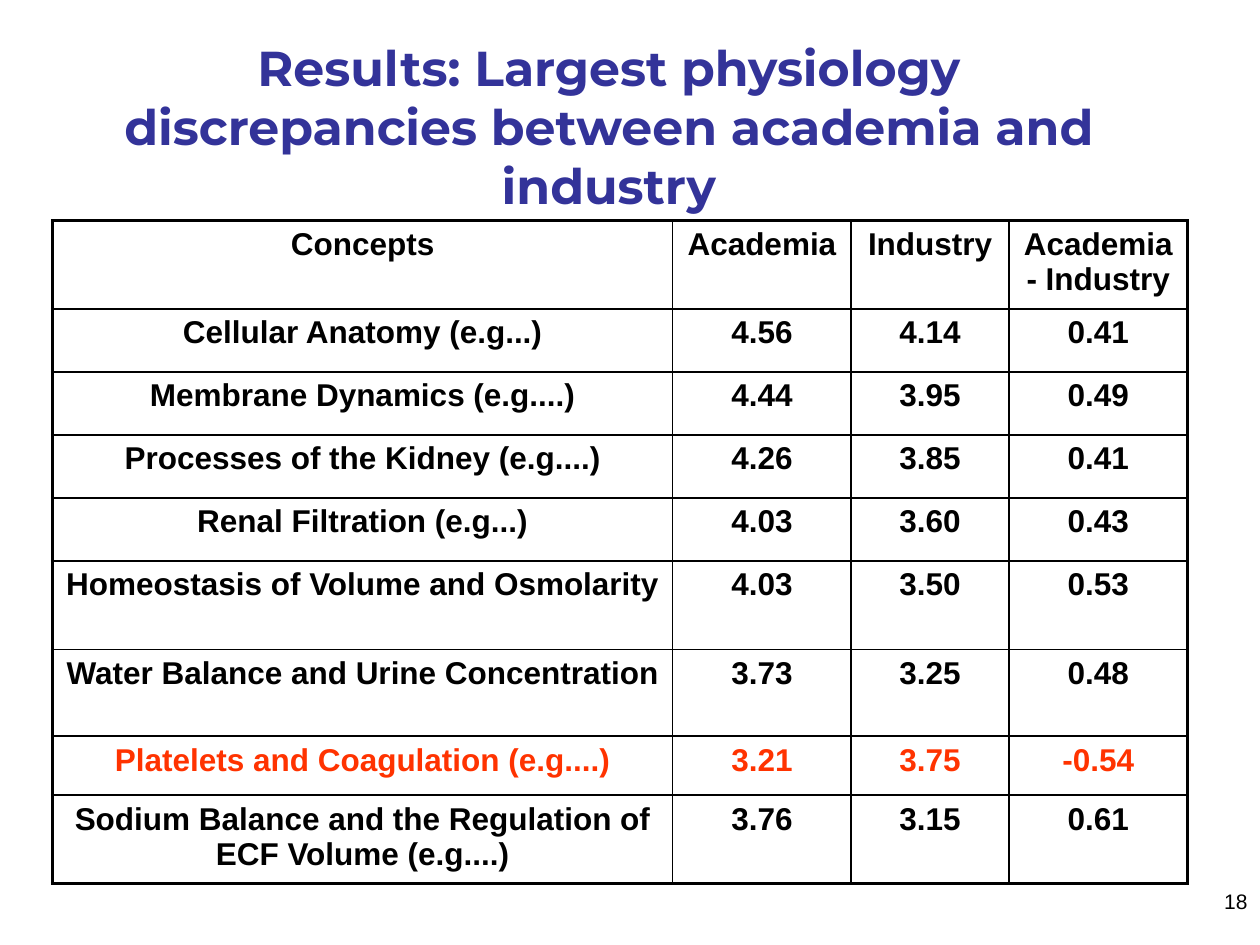
from lxml import etree
from pptx import Presentation
from pptx.dml.color import RGBColor
from pptx.enum import text
from pptx.oxml import ns
from pptx.util import Cm, Pt

BLACK = RGBColor(0x00, 0x00, 0x00)
INDIGO = RGBColor(0x33, 0x33, 0x99)
ORANGE_RED = RGBColor(0xFF, 0x33, 0x00)

THIN, THICK = Pt(1), Pt(2.25)
COLUMN_WIDTHS = [12.5, 3.6, 3.18, 3.6]
ROW_HEIGHTS = [1.78, 1.27, 1.27, 1.27, 1.27, 1.78, 1.75, 1.19, 1.4]
HIGHLIGHTED_ROW = 7
RESULTS = [
    ("Concepts", "Academia", "Industry", "Academia - Industry"),
    ("Cellular Anatomy (e.g...)", "4.56", "4.14", "0.41"),
    ("Membrane Dynamics (e.g....)", "4.44", "3.95", "0.49"),
    ("Processes of the Kidney (e.g....)", "4.26", "3.85", "0.41"),
    ("Renal Filtration (e.g...)", "4.03", "3.60", "0.43"),
    ("Homeostasis of Volume and Osmolarity", "4.03", "3.50", "0.53"),
    ("Water Balance and Urine Concentration", "3.73", "3.25", "0.48"),
    ("Platelets and Coagulation (e.g....)", "3.21", "3.75", "-0.54"),
    ("Sodium Balance and the Regulation of ECF Volume (e.g....)", "3.76", "3.15", "0.61"),
]

TITLE_FORMAT = {"name": "Montserrat", "size": Pt(28), "bold": True}
CELL_FORMAT = {"name": "Arial", "size": Pt(18), "bold": True}
NUMBER_FORMAT = {"name": "Arial", "size": Pt(12), "bold": False}


def write_paragraph(frame, wording, alignment, font_format, color):
    paragraph = frame.paragraphs[0]
    paragraph.alignment = alignment
    run = paragraph.add_run()
    run.text = wording
    for attribute, value in font_format.items():
        setattr(run.font, attribute, value)
    run.font.color.rgb = color


def add_text(slide, box, wording, alignment, anchor, font_format, color):
    frame = slide.shapes.add_textbox(*box).text_frame
    frame.word_wrap = True
    frame.vertical_anchor = anchor
    write_paragraph(frame, wording, alignment, font_format, color)


def add_title(slide, box):
    add_text(slide, box, "Results: Largest physiology discrepancies between academia and industry",
             text.PP_ALIGN.CENTER, text.MSO_ANCHOR.MIDDLE, TITLE_FORMAT, INDIGO)


def add_slide_number(slide, box):
    add_text(slide, box, "18", text.PP_ALIGN.RIGHT, text.MSO_ANCHOR.TOP, NUMBER_FORMAT, BLACK)


def set_borders(cell, widths):
    properties = cell._tc.get_or_add_tcPr()
    for side, width in widths.items():
        line = etree.SubElement(properties, ns.qn(f"a:ln{side}"), w=str(width))
        fill = etree.SubElement(line, ns.qn("a:solidFill"))
        etree.SubElement(fill, ns.qn("a:srgbClr"), val=str(BLACK))


def add_results_table(slide, box):
    last_row, last_column = len(RESULTS) - 1, len(COLUMN_WIDTHS) - 1
    table = slide.shapes.add_table(last_row + 1, last_column + 1, *box).table
    table.first_row = table.horz_banding = False
    for column, width in zip(table.columns, COLUMN_WIDTHS):
        column.width = Cm(width)
    for row, height in zip(table.rows, ROW_HEIGHTS):
        row.height = Cm(height)
    for i, values in enumerate(RESULTS):
        color = ORANGE_RED if i == HIGHLIGHTED_ROW else BLACK
        for j, value in enumerate(values):
            cell = table.cell(i, j)
            write_paragraph(cell.text_frame, value, text.PP_ALIGN.CENTER, CELL_FORMAT, color)
            set_borders(cell, {
                "L": THICK if j == 0 else THIN,
                "R": THICK if j == last_column else THIN,
                "T": THICK if i == 0 else THIN,
                "B": THICK if i == last_row else THIN,
            })
            cell.fill.background()


def main():
    presentation = Presentation()
    presentation.slide_width, presentation.slide_height = Cm(25.4), Cm(19.05)
    slide = presentation.slides.add_slide(presentation.slide_layouts[6])
    add_slide_number(slide, (Cm(20.12), Cm(17.78), Cm(5.28), Cm(1.27)))
    add_title(slide, (Cm(1.48), Cm(1.27), Cm(21.59), Cm(2.54)))
    add_results_table(slide, (Cm(1.06), Cm(4.45), Cm(sum(COLUMN_WIDTHS)), Cm(sum(ROW_HEIGHTS))))
    presentation.save("out.pptx")


if __name__ == "__main__":
    main()
